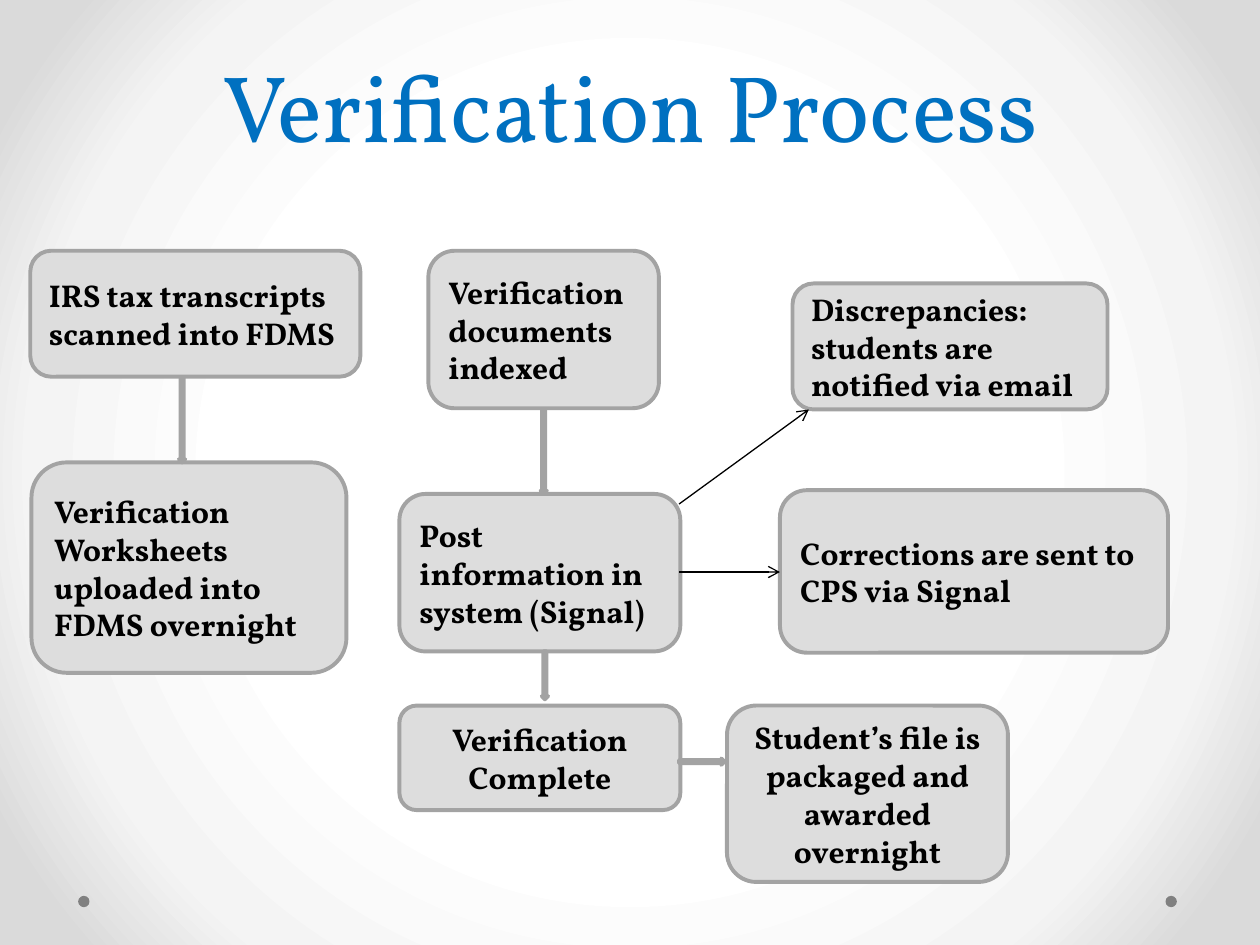
from lxml.etree import SubElement
from pptx import Presentation
from pptx.dml.color import RGBColor
from pptx.enum.shapes import MSO_CONNECTOR as LINE, MSO_SHAPE as SHAPE
from pptx.enum.text import MSO_ANCHOR as ANCHOR, PP_ALIGN as ALIGN
from pptx.oxml import parse_xml
from pptx.oxml.ns import nsdecls, qn
from pptx.util import Inches, Pt

HUES = {"title": "0070C0", "text": "000000", "fill": "DDDDDD",
        "edge": "A3A3A3", "dot": "808080"}
GLOW = [(0, "FFFFFF"), (50, "FFFFFF"), (76, "F4F4F4"), (92, "DADADA"), (100, "DADADA")]
FONT = "Vollkorn"


def hue(name):
    return RGBColor.from_string(HUES[name])


def add(kind, spot, fill="fill", edge="edge"):
    """Add a flat preset shape at spot, given in inches."""
    shape = slide.shapes.add_shape(kind, *map(Inches, spot))
    shape.shadow.inherit = False
    shape.fill.solid()
    shape.fill.fore_color.rgb = hue(fill)
    if edge:
        shape.line.color.rgb = hue(edge)
        shape.line.width = Pt(2.25)
    else:
        shape.line.fill.background()
    return shape


deck = Presentation()
deck.slide_width, deck.slide_height = Inches(10), Inches(7.5)
slide = deck.slides.add_slide(deck.slide_layouts[6])

# Radial background glow
slide.background.fill.solid()
back = slide.background._cSld.find(".//" + qn("p:bgPr"))
stops = "".join(f'<a:gs pos="{pos * 1000}"><a:srgbClr val="{rgb}"/></a:gs>'
                for pos, rgb in GLOW)
back.replace(back[0], parse_xml(
    f'<a:gradFill {nsdecls("a")} rotWithShape="1"><a:gsLst>{stops}</a:gsLst>'
    '<a:path path="circle"><a:fillToRect l="50000" t="50000" r="50000" b="50000"/>'
    '</a:path></a:gradFill>'))

for left in (9.25, 0.62):
    add(SHAPE.OVAL, (left, 7.11, 0.09, 0.09), "dot", None)

# Title
box = slide.shapes.add_textbox(Inches(0.5), 0, Inches(9), Inches(1.33))
frame = box.text_frame
frame.word_wrap = True
frame.vertical_anchor = ANCHOR.BOTTOM
para = frame.paragraphs[0]
para.text = "Verification Process"
para.alignment = ALIGN.CENTER
para.line_spacing = Pt(58)
para.font.name, para.font.size = FONT, Pt(54)
para.font.color.rgb = hue("title")

# Process steps
STEPS = [
    ((0.24, 1.99, 2.62, 1), ALIGN.LEFT, "IRS tax transcripts scanned into FDMS"),
    ((0.25, 3.67, 2.5, 1.67), ALIGN.LEFT,
     "Verification Worksheets uploaded into\nFDMS overnight"),
    ((3.4, 1.99, 1.83, 1.25), ALIGN.LEFT, "Verification documents indexed"),
    ((3.17, 3.92, 2.23, 1.25), ALIGN.LEFT, "Post information in system (Signal)"),
    ((6.29, 2.25, 2.5, 1), ALIGN.LEFT, "Discrepancies: students are notified via email"),
    ((6.19, 3.89, 3.08, 1.29), ALIGN.LEFT, "Corrections are sent to CPS via Signal"),
    ((3.17, 5.6, 2.23, 0.83), ALIGN.CENTER, "Verification Complete"),
    ((5.77, 5.6, 2.23, 1.4), ALIGN.CENTER,
     "Student’s file is packaged and awarded overnight"),
]
for spot, align, text in STEPS:
    frame = add(SHAPE.FLOWCHART_ALTERNATE_PROCESS, spot).text_frame
    frame.word_wrap = True
    frame.vertical_anchor = ANCHOR.MIDDLE
    frame.text = text
    for para in frame.paragraphs:
        para.alignment = align
        para.font.name, para.font.size, para.font.bold = FONT, Pt(18), True
        para.font.color.rgb = hue("text")

# Block arrows along the main flow
for spot in ((1.42, 3, 0.05, 0.67), (4.29, 3.25, 0.05, 0.67), (4.3, 5.17, 0.05, 0.38)):
    add(SHAPE.DOWN_ARROW, spot)
add(SHAPE.RIGHT_ARROW, (5.39, 6.02, 0.36, 0.05))

# Thin arrows to the two outcomes
for ends in ((5.39, 4, 6.42, 3.25), (5.39, 4.54, 6.19, 4.54)):
    link = slide.shapes.add_connector(LINE.STRAIGHT, *map(Inches, ends))
    link.line.color.rgb = hue("text")
    link.line.width = Pt(0.75)
    SubElement(link.line._get_or_add_ln(), qn("a:tailEnd"), type="arrow")
    SubElement(link._element.spPr, qn("a:effectLst"))

deck.save("out.pptx")
